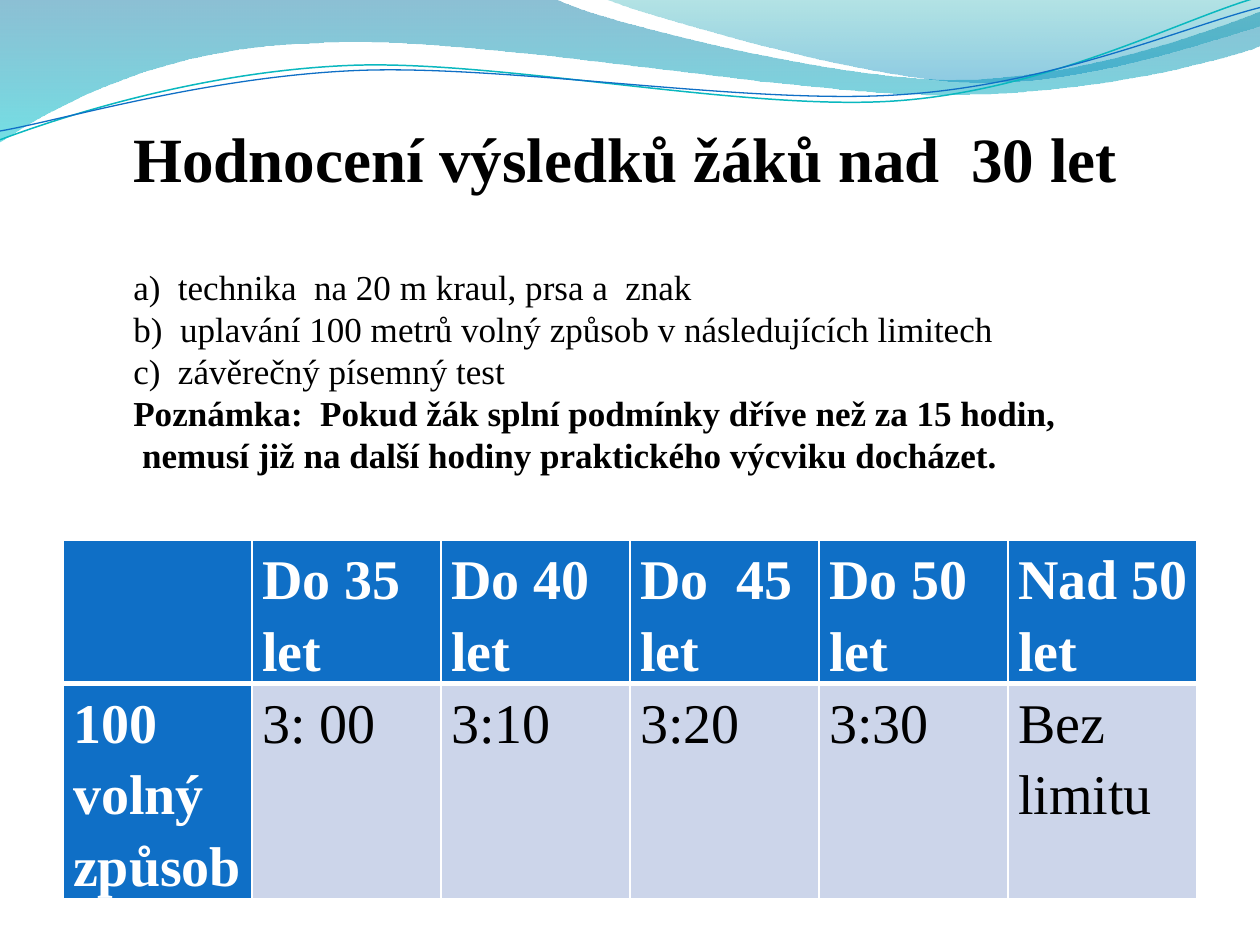
from lxml import etree
from pptx import Presentation
from pptx.dml.color import RGBColor
from pptx.enum.text import MSO_ANCHOR, PP_ALIGN
from pptx.oxml.ns import qn
from pptx.util import Inches, Pt

JUSTIFY = PP_ALIGN.JUSTIFY
TOP = MSO_ANCHOR.TOP

THEME = {
    "font": "Times New Roman",
    "text": "000000", "light": "FFFFFF", "accent": "0F6FC6", "cell": "CCD5EA", "teal": "0AB8BF",
    "title_size": 36, "body_size": 20, "table_size": 32,
    "body_leading": 24, "title_gap": 40,
}

TITLE = "Hodnocení výsledků žáků nad  30 let"
BODY = [
    ("a)  technika  na 20 m kraul, prsa a  znak ", False),
    ("b)  uplavání 100 metrů volný způsob v následujících limitech", False),
    ("c)  závěrečný písemný test", False),
    ("Poznámka:  Pokud žák splní podmínky dříve než za 15 hodin,", True),
    (" nemusí již na další hodiny praktického výcviku docházet.", True),
]
LIMITS = [
    ["", "Do 35 let", "Do 40 let", "Do  45 let", "Do 50 let", "Nad 50 let"],
    ["100 volný způsob", "3: 00", "3:10", "3:20", "3:30", "Bez limitu"],
]
COLUMN_WIDTH = 1.5
ROW_HEIGHTS = [1.13, 1.69]

WAVES = [
    ([(0, 0), (4.4, -0.01), (4.76, 0.17, 6.64, 0.63, 7.58, 0.63),
      (8.53, 0.63, 9.58, 0.26, 10, 0.09), (10.01, 0.36),
      (9.83, 0.44, 8.7, 0.76, 7.46, 0.75), (6.22, 0.75, 3.82, 0.28, 2.57, 0.34),
      (1.29, 0.36, 0.46, 0.83, -0.01, 1.13), (0, 0)],
     [("0074A1", 45), ("00C6CF", 55)]),
    ([(4.79, -0.01), (5.09, 0.11, 6.82, 0.62, 7.69, 0.65),
      (8.56, 0.69, 9.61, 0.32, 10, 0.21), (10, 0), (4.79, -0.01)],
     [("00A1A9", 30), ("008BBF", 45)]),
]
STROKES = [
    ([(0, 1.11), (0.48, 0.93, 1.58, 0.57, 2.77, 0.52), (3.95, 0.47, 5.93, 0.89, 7.13, 0.8),
      (8.33, 0.71, 9.38, 0.15, 9.98, -0.02)], "teal", 0.85),
    ([(0, 1.04), (0.47, 0.96, 1.64, 0.61, 2.83, 0.56), (4.03, 0.51, 5.97, 0.84, 7.17, 0.75),
      (8.36, 0.67, 9.41, 0.21, 10, 0.06)], "accent", 0.75),
]


def color(name):
    return RGBColor.from_string(THEME.get(name, name))


def add_outline(page, segments, close):
    anchors = [(Inches(segment[-2]), Inches(segment[-1])) for segment in segments]
    builder = page.shapes.build_freeform(*anchors[0])
    builder.add_line_segments(anchors[1:], close=close)
    outline = builder.convert_to_shape()
    outline.shadow.inherit = False
    sides = list(outline.element.spPr.iter(qn("a:lnTo")))
    for side, segment in zip(sides, segments[1:]):
        if len(segment) == 6:
            side.getparent().replace(side, curve_node(outline, segment))
    return outline


def curve_node(outline, segment):
    curve = etree.Element(qn("a:cubicBezTo"))
    for x, y in zip(segment[::2], segment[1::2]):
        etree.SubElement(curve, qn("a:pt"), x=str(Inches(x) - outline.left),
                         y=str(Inches(y) - outline.top))
    return curve


def add_wave(page, segments, stops):
    wave = add_outline(page, segments, True)
    wave.line.fill.background()
    wave.fill.gradient()
    wave.fill.gradient_angle = 270
    for stop, (shade, _) in zip(wave.fill.gradient_stops, stops):
        stop.color.rgb = color(shade)
    for node, (_, opacity) in zip(wave.element.spPr.iter(qn("a:srgbClr")), stops):
        etree.SubElement(node, qn("a:alpha"), val=str(opacity * 1000))


def add_stroke(page, segments, shade, width):
    stroke = add_outline(page, segments, False)
    stroke.fill.background()
    stroke.line.color.rgb = color(shade)
    stroke.line.width = Pt(width)


def style(para, size, bold, shade):
    for span in para.runs:
        span.font.name = THEME["font"]
        span.font.size = Pt(THEME[size])
        span.font.bold = bold
        span.font.color.rgb = color(shade)


def add_text(page):
    box = page.shapes.add_textbox(Inches(0.96), Inches(0.9), Inches(8.08), Inches(2.95))
    frame = box.text_frame
    frame.word_wrap = True
    frame.vertical_anchor = TOP
    frame.text = "\n".join([TITLE] + [line for line, _ in BODY])
    title, *lines = frame.paragraphs
    title.alignment = JUSTIFY
    title.space_after = Pt(THEME["title_gap"])
    style(title, "title_size", True, "text")
    for para, (_, bold) in zip(lines, BODY):
        para.alignment = JUSTIFY
        para.line_spacing = Pt(THEME["body_leading"])
        style(para, "body_size", bold, "text")


def add_borders(cell, widths):
    properties = cell._tc.get_or_add_tcPr()
    for side, width in widths.items():
        border = etree.SubElement(properties, qn("a:ln" + side), w=str(Pt(width)))
        fill = etree.SubElement(border, qn("a:solidFill"))
        etree.SubElement(fill, qn("a:srgbClr"), val=THEME["light"])


def add_limits(page):
    table = page.shapes.add_table(
        len(LIMITS), len(LIMITS[0]), Inches(0.5), Inches(4.29),
        Inches(COLUMN_WIDTH * len(LIMITS[0])), Inches(sum(ROW_HEIGHTS))).table
    for column in table.columns:
        column.width = Inches(COLUMN_WIDTH)
    for row, height in zip(table.rows, ROW_HEIGHTS):
        row.height = Inches(height)
    for r, values in enumerate(LIMITS):
        for c, value in enumerate(values):
            cell = table.cell(r, c)
            heading = r == 0 or c == 0
            cell.margin_left, cell.margin_right = Inches(0.08), Inches(0.06)
            cell.margin_top = cell.margin_bottom = 0
            add_borders(cell, {"L": 1, "R": 1, "T": 3 if r == 1 else 1, "B": 3 if r == 0 else 1})
            cell.fill.solid()
            cell.fill.fore_color.rgb = color("accent" if heading else "cell")
            cell.text_frame.text = value
            para = cell.text_frame.paragraphs[0]
            para.line_spacing = 1.15
            style(para, "table_size", heading, "light" if heading else "text")


def main():
    deck = Presentation()
    deck.slide_width, deck.slide_height = Inches(10), Inches(7.5)
    page = deck.slides.add_slide(deck.slide_layouts[6])
    for wave in WAVES:
        add_wave(page, *wave)
    for stroke in STROKES:
        add_stroke(page, *stroke)
    add_limits(page)
    add_text(page)
    deck.save("out.pptx")


if __name__ == "__main__":
    main()
